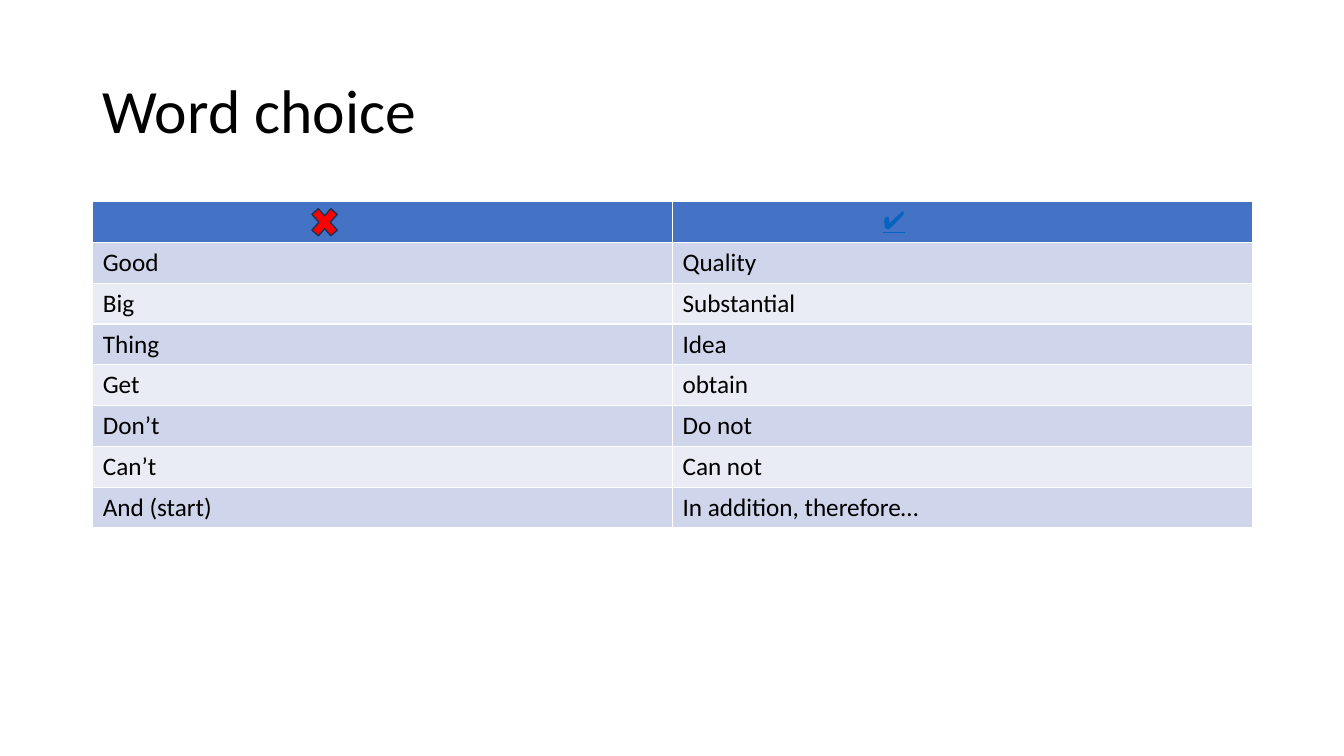
import pptx
import pptx.util
from pptx.dml.color import RGBColor
from pptx.enum.shapes import MSO_SHAPE
from pptx.enum.text import MSO_ANCHOR
from pptx.util import Inches

BLACK = RGBColor(0x00, 0x00, 0x00)
RED = RGBColor(0xFF, 0x00, 0x00)
CROSS_LINE = RGBColor(0x1E, 0x32, 0x56)
CHECK_BLUE = RGBColor(0x05, 0x63, 0xC1)
HEADER_BLUE = RGBColor(0x44, 0x72, 0xC4)
BANDS = (RGBColor(0xCF, 0xD5, 0xEA), RGBColor(0xE9, 0xEB, 0xF5))

# Words to avoid and their replacements
WORD_PAIRS = [
    ("Good", "Quality"),
    ("Big", "Substantial"),
    ("Thing", "Idea"),
    ("Get", "obtain"),
    ("Don’t", "Do not"),
    ("Can’t", "Can not"),
    ("And (start)", "In addition, therefore…"),
]


def format_text(p, size, color, font="Calibri"):
    for r in p.runs:
        r.font.name = font
        r.font.size = pptx.util.Pt(size)
        r.font.color.rgb = color


def add_text(slide, text, left, top, width, height, size, color, font="Calibri"):
    tf = slide.shapes.add_textbox(
        Inches(left), Inches(top), Inches(width), Inches(height)).text_frame
    tf.word_wrap = True
    tf.text = text
    format_text(tf.paragraphs[0], size, color, font)
    return tf


def add_word_table(slide, left, top, width, row_height):
    rows = [("", "")] + WORD_PAIRS
    table = slide.shapes.add_table(
        len(rows), 2, Inches(left), Inches(top),
        Inches(width), Inches(row_height * len(rows))).table
    for i, words in enumerate(rows):
        table.rows[i].height = Inches(row_height)
        for j, word in enumerate(words):
            cell = table.cell(i, j)
            cell.fill.solid()
            cell.fill.fore_color.rgb = BANDS[(i - 1) % 2] if i else HEADER_BLUE
            cell.text = word
            format_text(cell.text_frame.paragraphs[0], 18, BLACK)


def add_cross(slide, left, top, width, height):
    sp = slide.shapes.add_shape(
        MSO_SHAPE.MATH_MULTIPLY, Inches(left), Inches(top),
        Inches(width), Inches(height))
    sp.shadow.inherit = False
    sp.fill.solid()
    sp.fill.fore_color.rgb = RED
    sp.line.color.rgb = CROSS_LINE
    sp.line.width = pptx.util.Pt(1)


def main():
    prs = pptx.Presentation()
    prs.slide_width = Inches(13.33)
    prs.slide_height = Inches(7.5)
    slide = prs.slides.add_slide(prs.slide_layouts[6])

    # Title
    title = add_text(slide, "Word choice", 0.92, 0.4, 11.5, 1.45, 44, BLACK)
    title.vertical_anchor = MSO_ANCHOR.MIDDLE
    title.paragraphs[0].line_spacing = 0.9

    # Word table
    add_word_table(slide, 0.92, 2, 11.5, 0.405)

    # Header marks
    add_cross(slide, 3.04, 2, 0.36, 0.41)
    check = add_text(slide, "✔️", 8.66, 1.98, 0.68, 0.4, 18, CHECK_BLUE, "Arial")
    check.paragraphs[0].runs[0].font.underline = True

    prs.save("out.pptx")


if __name__ == "__main__":
    main()
